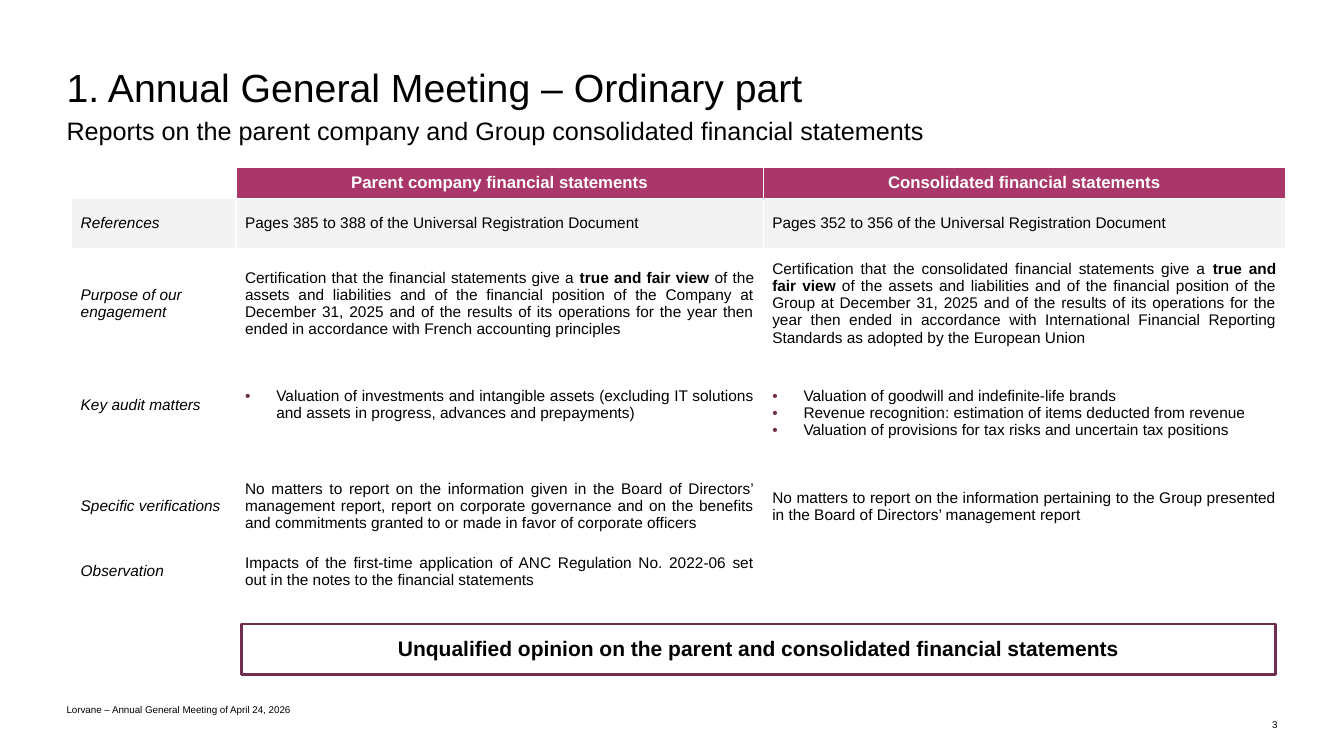
from dataclasses import dataclass

from lxml import etree
from pptx import Presentation
from pptx.dml.color import RGBColor
from pptx.enum.shapes import MSO_SHAPE
from pptx.enum.text import MSO_ANCHOR, MSO_AUTO_SIZE, PP_ALIGN
from pptx.oxml.ns import qn
from pptx.util import Inches, Length, Pt

LEFT, CENTER, RIGHT, JUSTIFY = PP_ALIGN.LEFT, PP_ALIGN.CENTER, PP_ALIGN.RIGHT, PP_ALIGN.JUSTIFY
TOP, MIDDLE, BOTTOM = MSO_ANCHOR.TOP, MSO_ANCHOR.MIDDLE, MSO_ANCHOR.BOTTOM
NO_AUTOFIT = MSO_AUTO_SIZE.NONE
RECTANGLE = MSO_SHAPE.RECTANGLE

COLORS = {"text": "000000", "white": "FFFFFF", "header": "AA3769",
          "accent": "702E4F", "band": "F3F3F3"}
FONT = "Arial"
SLIDE_WIDTH, SLIDE_HEIGHT = Inches(13.33), Inches(7.5)

# Table grid, in percent of the slide's width and height
COLUMN_WIDTHS = (12.23, 39.23, 38.86)
ROW_HEIGHTS = (4, 6.67, 14.53, 14.53, 10.13, 7.07)
MARGIN_X, MARGIN_Y = Inches(0.09), Inches(0.04)
LINE_ROOM = Inches(0.17)
BULLET_INDENT = Inches(0.31)


@dataclass(frozen=True)
class Area:
    """A place given in percent of the slide's width and height."""
    left: float
    top: float
    width: float
    height: float

    def box(self) -> tuple[Length, Length, Length, Length]:
        return share_x(self.left), share_y(self.top), share_x(self.width), share_y(self.height)


@dataclass(frozen=True)
class TextStyle:
    size: float
    align: PP_ALIGN = LEFT
    color: str = "text"
    bold: bool = False
    italic: bool = False
    spacing: float = 1.0


@dataclass(frozen=True)
class Label:
    text: str
    area: Area
    style: TextStyle
    anchor: MSO_ANCHOR = TOP


@dataclass(frozen=True)
class Cell:
    """Lines of a table cell; **marks** enclose bold words."""
    lines: tuple[str, ...]
    style: TextStyle
    fill: str = "white"
    bulleted: bool = False
    room_below: bool = False


HEADING = TextStyle(12, CENTER, "white", bold=True)
TOPIC = TextStyle(11, italic=True)
PLAIN = TextStyle(11)
BODY = TextStyle(11, JUSTIFY)
SMALL = TextStyle(7)

TITLE = Label("1. Annual General Meeting – Ordinary part",
              Area(4.95, 9.33, 67.52, 6.67), TextStyle(28, spacing=0.85))
SUBTITLE = Label("Reports on the parent company and Group consolidated financial statements",
                 Area(4.95, 15.87, 67.52, 4.27), TextStyle(18, spacing=0.85))
LABELS = (
    Label("3", Area(84.55, 94.67, 10.5, 2), TextStyle(7, RIGHT), BOTTOM),
    Label("Unqualified opinion on the parent and consolidated financial statements",
          Area(18, 84.8, 76.89, 2.4), TextStyle(15, CENTER, bold=True, spacing=0.78)),
    Label("Lorvane – Annual General Meeting of April 24, 2026",
          Area(4.95, 92.67, 43.59, 2), SMALL, BOTTOM),
)
OPINION_FRAME = Area(18, 82.53, 76.89, 6.67)
TABLE_AREA = Area(5.33, 22.13, sum(COLUMN_WIDTHS), sum(ROW_HEIGHTS))

ROWS = (
    (Cell((), HEADING),
     Cell(("Parent company financial statements",), HEADING, "header"),
     Cell(("Consolidated financial statements",), HEADING, "header")),
    (Cell(("References",), TOPIC, "band"),
     Cell(("Pages 385 to 388 of the Universal Registration Document",), PLAIN, "band"),
     Cell(("Pages 352 to 356 of the Universal Registration Document",), PLAIN, "band")),
    (Cell(("Purpose of our engagement",), TOPIC),
     Cell(("Certification that the financial statements give a **true and fair view** of the "
           "assets and liabilities and of the financial position of the Company at December 31, "
           "2025 and of the results of its operations for the year then ended in accordance "
           "with French accounting principles",), BODY),
     Cell(("Certification that the consolidated financial statements give a **true and fair "
           "view** of the assets and liabilities and of the financial position of the Group at "
           "December 31, 2025 and of the results of its operations for the year then ended in "
           "accordance with International Financial Reporting Standards as adopted by the "
           "European Union",), BODY)),
    (Cell(("Key audit matters",), TOPIC, room_below=True),
     Cell(("Valuation of investments and intangible assets (excluding IT solutions and assets "
           "in progress, advances and prepayments)",), BODY, bulleted=True, room_below=True),
     Cell(("Valuation of goodwill and indefinite-life brands",
           "Revenue recognition: estimation of items deducted from revenue",
           "Valuation of provisions for tax risks and uncertain tax positions"),
          BODY, bulleted=True)),
    (Cell(("Specific verifications",), TOPIC),
     Cell(("No matters to report on the information given in the Board of Directors’ management "
           "report, report on corporate governance and on the benefits and commitments granted "
           "to or made in favor of corporate officers",), BODY),
     Cell(("No matters to report on the information pertaining to the Group presented in the "
           "Board of Directors’ management report",), BODY)),
    (Cell(("Observation",), TOPIC),
     Cell(("Impacts of the first-time application of ANC Regulation No. 2022‑06 set out in the "
           "notes to the financial statements",), BODY),
     Cell((), BODY)),
)


def share_x(percent: float) -> Length:
    return Length(round(SLIDE_WIDTH * percent / 100))


def share_y(percent: float) -> Length:
    return Length(round(SLIDE_HEIGHT * percent / 100))


def rgb(name: str) -> RGBColor:
    return RGBColor.from_string(COLORS[name])


def add_bullet(paragraph) -> None:
    properties = paragraph._p.get_or_add_pPr()
    properties.set("marL", str(BULLET_INDENT))
    properties.set("indent", str(-BULLET_INDENT))
    color = etree.SubElement(properties, qn("a:buClr"))
    etree.SubElement(color, qn("a:srgbClr"), val=COLORS["accent"])
    etree.SubElement(properties, qn("a:buFont"), typeface=FONT)
    etree.SubElement(properties, qn("a:buChar"), char="•")


def write_paragraph(paragraph, text: str, style: TextStyle) -> None:
    paragraph.alignment = style.align
    paragraph.line_spacing = style.spacing
    paragraph.space_before = Pt(0)
    for position, part in enumerate(text.split("**")):
        run = paragraph.add_run()
        run.text = part
        run.font.name = FONT
        run.font.size = Pt(style.size)
        run.font.bold = style.bold or position % 2 == 1
        run.font.italic = style.italic
        run.font.color.rgb = rgb(style.color)


def write_label(shape, label: Label) -> None:
    shape.left, shape.top, shape.width, shape.height = label.area.box()
    frame = shape.text_frame
    frame.word_wrap = True
    frame.auto_size = NO_AUTOFIT
    frame.vertical_anchor = label.anchor
    frame.margin_left = frame.margin_right = frame.margin_top = frame.margin_bottom = 0
    write_paragraph(frame.paragraphs[0], label.text, label.style)


def write_cell(table_cell, cell: Cell) -> None:
    table_cell.fill.solid()
    table_cell.fill.fore_color.rgb = rgb(cell.fill)
    table_cell.vertical_anchor = MIDDLE
    table_cell.margin_left = table_cell.margin_right = MARGIN_X
    margin_y = MARGIN_Y if cell.lines else 0
    table_cell.margin_top = margin_y
    table_cell.margin_bottom = margin_y + (LINE_ROOM if cell.room_below else 0)
    frame = table_cell.text_frame
    for index, line in enumerate(cell.lines):
        paragraph = frame.add_paragraph() if index else frame.paragraphs[0]
        write_paragraph(paragraph, line, cell.style)
        if cell.bulleted:
            add_bullet(paragraph)


def add_statement_table(slide) -> None:
    table = slide.shapes.add_table(len(ROWS), len(COLUMN_WIDTHS), *TABLE_AREA.box()).table
    table.horz_banding = False
    for column, width in zip(table.columns, COLUMN_WIDTHS):
        column.width = share_x(width)
    for table_row, height, cells in zip(table.rows, ROW_HEIGHTS, ROWS):
        table_row.height = share_y(height)
        for table_cell, cell in zip(table_row.cells, cells):
            write_cell(table_cell, cell)


def add_opinion_frame(slide) -> None:
    shape = slide.shapes.add_shape(RECTANGLE, *OPINION_FRAME.box())
    shape.shadow.inherit = False
    shape.fill.background()
    shape.line.color.rgb = rgb("accent")
    shape.line.width = Pt(2)


def main() -> None:
    presentation = Presentation()
    presentation.slide_width, presentation.slide_height = SLIDE_WIDTH, SLIDE_HEIGHT
    slide = presentation.slides.add_slide(presentation.slide_layouts[0])
    write_label(slide.shapes.title, TITLE)
    write_label(slide.placeholders[1], SUBTITLE)
    add_opinion_frame(slide)
    add_statement_table(slide)
    for label in LABELS:
        write_label(slide.shapes.add_textbox(*label.area.box()), label)
    presentation.save("out.pptx")


if __name__ == "__main__":
    main()
